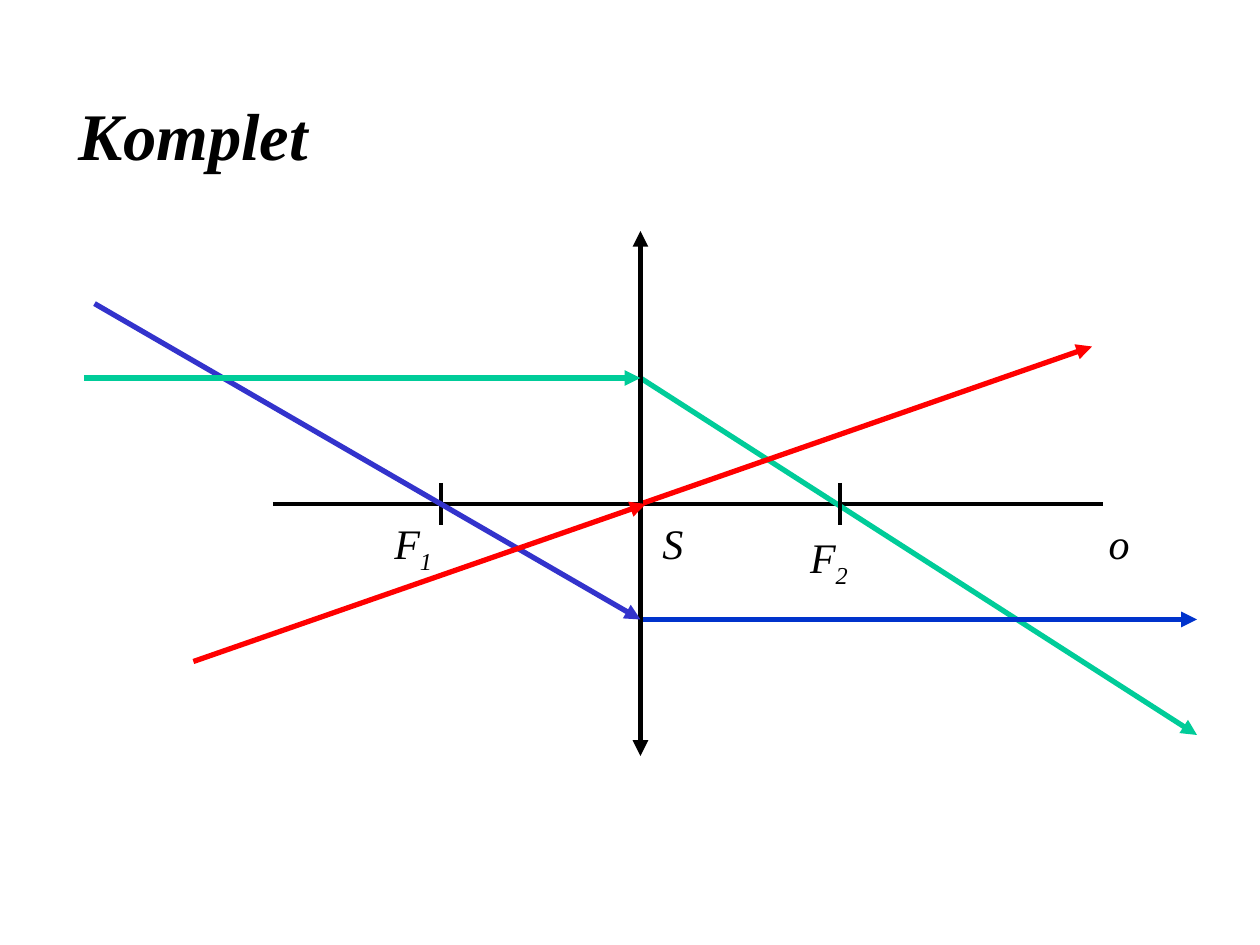
"""Build the slide showing the three principal rays through a converging lens."""
from lxml import etree
from pptx import Presentation
from pptx import util as u
from pptx.dml.color import RGBColor
from pptx.enum import shapes, text
from pptx.oxml.ns import qn

COLORS = {"ink": "000000", "parallel": "00CC99", "central": "FF0000",
          "focal": "3333CC", "refracted": "0033CC"}
FONT = "Times New Roman"
LENS_X, AXIS_Y = 366, 288
FOCUS_1, FOCUS_2, TICK = 252, 480, 12
PARALLEL_Y, FOCAL_Y, RAY_END = 216, 354, 684


def focus_tick(x):
    return (x, AXIS_Y - TICK), (x, AXIS_Y + TICK), "ink", 2.25, ()


RAYS = [
    ((156, AXIS_Y), (630, AXIS_Y), "ink", 2.25, ()),
    ((LENS_X, PARALLEL_Y), (RAY_END, 420), "parallel", 3, ("tailEnd",)),
    focus_tick(FOCUS_2),
    focus_tick(FOCUS_1),
    ((LENS_X, AXIS_Y), (624, 198), "central", 3, ("tailEnd",)),
    ((LENS_X, FOCAL_Y), (RAY_END, FOCAL_Y), "refracted", 3, ("tailEnd",)),
    ((LENS_X, 132), (LENS_X, 432), "ink", 3, ("headEnd", "tailEnd")),
    ((54, 173.5), (LENS_X, FOCAL_Y), "focal", 3, ("tailEnd",)),
    ((110.5, 378), (369, AXIS_Y), "central", 3, ("tailEnd",)),
    ((48, PARALLEL_Y), (LENS_X, PARALLEL_Y), "parallel", 3, ("tailEnd",)),
]

TITLE = ("Komplet", (36.7, 31.7, 147.6, 90))
LABELS = [
    ("F", "1", (218.2, 292.3, 58.3, 36)),
    ("F", "2", (455.8, 300.2, 91.4, 36)),
    ("o", "", (626.4, 292.3, 28.1, 34.6)),
    ("S", "", (371.5, 292.3, 23.8, 36)),
]
TITLE_FONT = {"name": FONT, "size": u.Pt(38), "bold": True, "italic": True}
LABEL_FONT = {"name": FONT, "size": u.Pt(24), "italic": True}
TITLE_FRAME = {"word_wrap": True, "vertical_anchor": text.MSO_ANCHOR.MIDDLE,
               "margin_left": 0, "margin_right": 0}
LABEL_FRAME = {"word_wrap": True}


def apply(target, values):
    for key, value in values.items():
        setattr(target, key, value)


def add_ray(slide, start, end, color, width, arrowheads):
    ray = slide.shapes.add_connector(
        shapes.MSO_CONNECTOR.STRAIGHT, *map(u.Pt, start + end))
    ray.line.color.rgb = RGBColor.from_string(COLORS[color])
    ray.line.width = u.Pt(width)
    outline = ray.line._get_or_add_ln()
    for arrowhead in arrowheads:
        etree.SubElement(outline, qn(f"a:{arrowhead}"), type="triangle")
    etree.SubElement(ray._element.spPr, qn("a:effectLst"))


def add_run(paragraph, words, font):
    run = paragraph.add_run()
    run.text = words
    apply(run.font, font)
    run.font.color.rgb = RGBColor.from_string(COLORS["ink"])
    return run


def add_text(slide, place, frame_values):
    frame = slide.shapes.add_textbox(*map(u.Pt, place)).text_frame
    apply(frame, frame_values)
    return frame.paragraphs[0]


def main():
    deck = Presentation()
    apply(deck, {"slide_width": u.Pt(720), "slide_height": u.Pt(540)})
    slide = deck.slides.add_slide(deck.slide_layouts[6])

    heading, place = TITLE
    paragraph = add_text(slide, place, TITLE_FRAME)
    paragraph.alignment = text.PP_ALIGN.CENTER
    add_run(paragraph, heading, TITLE_FONT)

    for ray in RAYS:
        add_ray(slide, *ray)

    for letter, index, place in LABELS:
        paragraph = add_text(slide, place, LABEL_FRAME)
        add_run(paragraph, letter, LABEL_FONT)
        if index:
            subscript = add_run(paragraph, index, LABEL_FONT)
            subscript.font._element.set("baseline", "-25000")

    deck.save("out.pptx")


if __name__ == "__main__":
    main()
